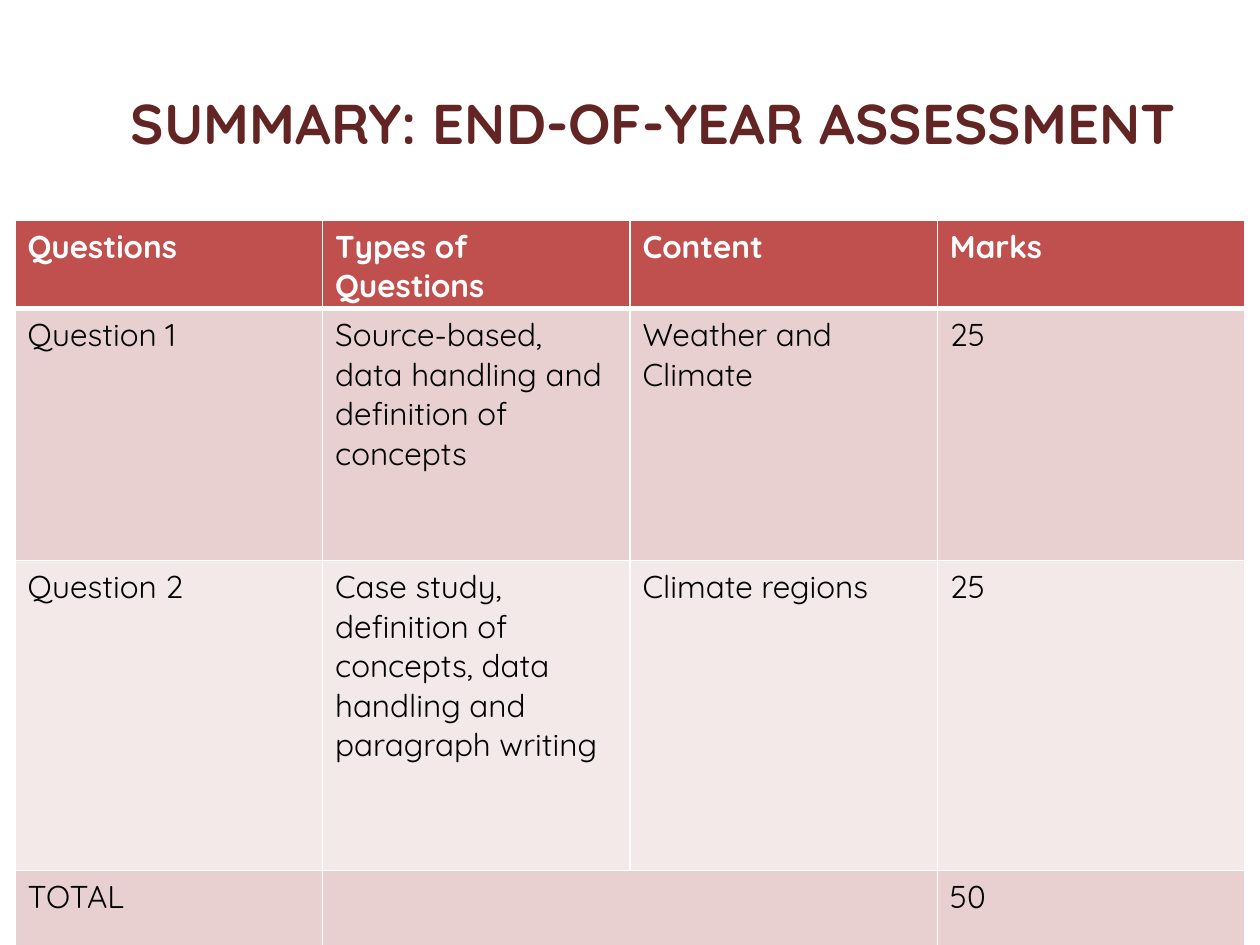
from lxml import etree
from pptx import Presentation
from pptx.dml.color import RGBColor
from pptx.enum.text import MSO_ANCHOR, PP_ALIGN
from pptx.oxml.ns import qn
from pptx.util import Pt

PX = 9144
MIDDLE = MSO_ANCHOR.MIDDLE
CENTER = PP_ALIGN.CENTER
FONT = "Quicksand"
COLORS = {
    "title": "632523",
    "head": "C0504D",
    "odd": "E8D0D0",
    "even": "F4E9E9",
    "white": "FFFFFF",
    "black": "000000",
}
HEADS = ["Questions", "Types of Questions", "Content", "Marks"]
ROWS = [
    ["Question 1", "Source-based, data handling and definition of concepts",
     "Weather and Climate", "25"],
    ["Question 2",
     "Case study, definition of concepts, data handling and paragraph writing",
     "Climate regions", "25"],
    ["TOTAL", "", "", "50"],
]
HEIGHTS = [62, 200, 246, 62]


def color(name):
    """Return the named colour."""
    return RGBColor.from_string(COLORS[name])


def write(frame, text, size=18, ink="black", bold=False, align=None):
    """Fill a text frame with one formatted paragraph and return it."""
    para = frame.paragraphs[0]
    para.alignment = align
    para.font.size = Pt(size)
    if text:
        run = para.add_run()
        run.text = text
        run.font.name = FONT
        run.font.size = Pt(size)
        run.font.bold = bold
        run.font.color.rgb = color(ink)
    return para


def edge(cell, side, width):
    """Draw one white border of a cell."""
    props = cell._tc.get_or_add_tcPr()
    line = etree.SubElement(props, qn(f"a:ln{side}"), w=str(Pt(width)))
    fill = etree.SubElement(line, qn("a:solidFill"))
    etree.SubElement(fill, qn("a:srgbClr"), val=COLORS["white"])


def title(slide, left, top, width, height):
    """Place the heading in the given box."""
    box = slide.shapes.add_textbox(left * PX, top * PX, width * PX, height * PX)
    frame = box.text_frame
    frame.word_wrap = True
    frame.vertical_anchor = MIDDLE
    para = write(frame, "SUMMARY: END-OF-YEAR ASSESSMENT ", size=32,
                 ink="title", bold=True, align=CENTER)
    para.line_spacing = 1.15
    para.space_after = Pt(6)
    para._p.get_or_add_pPr().set("marL", str(50 * PX))


def grid(slide, left, top, width):
    """Place the marks table in the given box."""
    data = [HEADS] + ROWS
    table = slide.shapes.add_table(
        len(data), len(HEADS), left * PX, top * PX, width * PX,
        sum(HEIGHTS) * PX).table
    for col in table.columns:
        col.width = width // len(HEADS) * PX
    for i, texts in enumerate(data):
        table.rows[i].height = HEIGHTS[i] * PX
        head = i == 0
        tint = "head" if head else "odd" if i % 2 else "even"
        for j, text in enumerate(texts):
            cell = table.cell(i, j)
            write(cell.text_frame, text, bold=head,
                  ink="white" if head else "black")
            for side in "LRTB":
                thick = (head and side == "B") or (i == 1 and side == "T")
                edge(cell, side, 3 if thick else 1)
            cell.fill.solid()
            cell.fill.fore_color.rgb = color(tint)
    last = len(data) - 1
    table.cell(last, 1).merge(table.cell(last, 2))


def main():
    """Build and save the slide."""
    deck = Presentation()
    deck.slide_width = 1000 * PX
    deck.slide_height = 750 * PX
    slide = deck.slides.add_slide(deck.slide_layouts[6])
    title(slide, 0, 30, 1000, 125)
    grid(slide, 12, 175, 976)
    deck.save("out.pptx")


if __name__ == "__main__":
    main()
